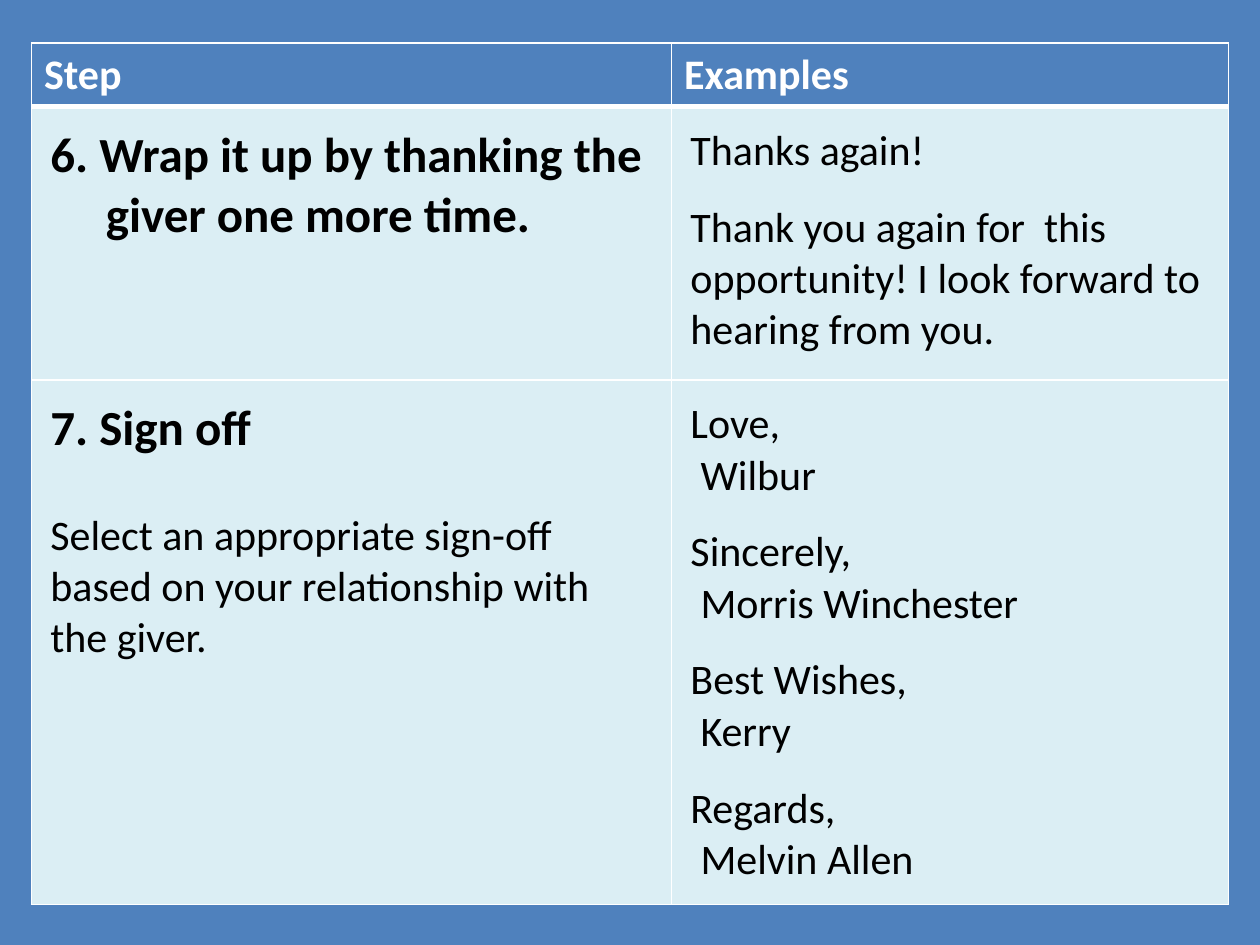
from lxml import etree
from pptx import Presentation
from pptx import util as u
from pptx.dml.color import RGBColor
from pptx.oxml import ns

BLUE = RGBColor(0x4F, 0x81, 0xBD)
PALE = RGBColor(0xDB, 0xEE, 0xF4)
WHITE = RGBColor(0xFF, 0xFF, 0xFF)
BLACK = RGBColor(0, 0, 0)
FONT = "Calibri"
BODY, HEADING = 24, 28
LINE = 1.22  # line height as a share of the font size
SMALL_GAP, LARGE_GAP = 12 * LINE, 24 * LINE
NAME_INDENT, HANGING = 0.08, 0.44

LEFT, TOP = 0.25, 0.34
COLUMNS = (5.08, 4.42)
ROWS = (0.48, 2.17, 4.15)

SIGN_OFFS = (
    ("Love,", "Wilbur"),
    ("Sincerely,", "Morris Winchester"),
    ("Best Wishes,", "Kerry"),
    ("Regards,", "Melvin Allen"),
)


def set_borders(cell, top, bottom):
    """Draw white borders; top and bottom are widths in points."""
    properties = cell._tc.get_or_add_tcPr()
    for side, width in (("L", 1), ("R", 1), ("T", top), ("B", bottom)):
        line = etree.SubElement(properties, ns.qn(f"a:ln{side}"), w=str(u.Pt(width)))
        fill = etree.SubElement(line, ns.qn("a:solidFill"))
        etree.SubElement(fill, ns.qn("a:srgbClr"), val=str(WHITE))


def style_cell(cell, fill, top=1, bottom=1, inset=None):
    set_borders(cell, top, bottom)
    cell.fill.solid()
    cell.fill.fore_color.rgb = fill
    if inset is not None:
        cell.margin_left = cell.margin_right = u.Inches(inset)
        cell.margin_top = cell.margin_bottom = u.Inches(inset)


def add_para(cell, lines, size=BODY, bold=False, color=BLACK, gap=0, indent=0, first=0):
    """Add a paragraph; lines are parted by line breaks."""
    frame = cell.text_frame
    para = frame.paragraphs[0]
    if para.runs:
        para = frame.add_paragraph()
    para.space_before = u.Pt(round(gap, 1))
    properties = para._p.get_or_add_pPr()
    properties.set("marL", str(u.Inches(indent)))
    properties.set("indent", str(u.Inches(first)))
    for number, line in enumerate(lines):
        if number:
            para.add_line_break()
        span = para.add_run()
        span.text = line
        font = span.font
        font.name, font.size, font.bold = FONT, u.Pt(size), bold
        font.color.rgb = color


def add_steps_table(page):
    table = page.shapes.add_table(
        len(ROWS), len(COLUMNS), u.Inches(LEFT), u.Inches(TOP),
        u.Inches(sum(COLUMNS)), u.Inches(sum(ROWS))).table
    table.horz_banding = False
    for column, width in zip(table.columns, COLUMNS):
        column.width = u.Inches(width)
    for row, height in zip(table.rows, ROWS):
        row.height = u.Inches(height)
    for number, row in enumerate(table.rows):
        for cell in row.cells:
            if number == 0:
                style_cell(cell, BLUE, bottom=3)
            else:
                style_cell(cell, PALE, top=3 if number == 1 else 1, inset=0.15)
    return table


def main():
    deck = Presentation()
    deck.slide_width, deck.slide_height = u.Inches(10), u.Inches(7.5)
    page = deck.slides.add_slide(deck.slide_layouts[6])
    page.background.fill.solid()
    page.background.fill.fore_color.rgb = BLUE
    table = add_steps_table(page)

    # Header row
    for column, title in enumerate(("Step", "Examples")):
        add_para(table.cell(0, column), [title], bold=True, color=WHITE)

    # Step 6
    add_para(table.cell(1, 0),
             ["6. Wrap it up by thanking the ", "giver one more time."],
             HEADING, True, indent=HANGING, first=-HANGING)
    thanks = table.cell(1, 1)
    add_para(thanks, ["Thanks again!"])
    add_para(thanks, ["Thank you again for  this opportunity! "
                      "I look forward to hearing from you."], gap=SMALL_GAP)

    # Step 7
    step = table.cell(2, 0)
    add_para(step, ["7. Sign off"], HEADING, True)
    add_para(step, ["Select an appropriate sign-off based on your "
                    "relationship with the giver."], gap=LARGE_GAP)
    examples = table.cell(2, 1)
    for number, (closing, name) in enumerate(SIGN_OFFS):
        add_para(examples, [closing], gap=SMALL_GAP if number else 0)
        add_para(examples, [name], indent=NAME_INDENT)

    deck.save("out.pptx")


if __name__ == "__main__":
    main()
